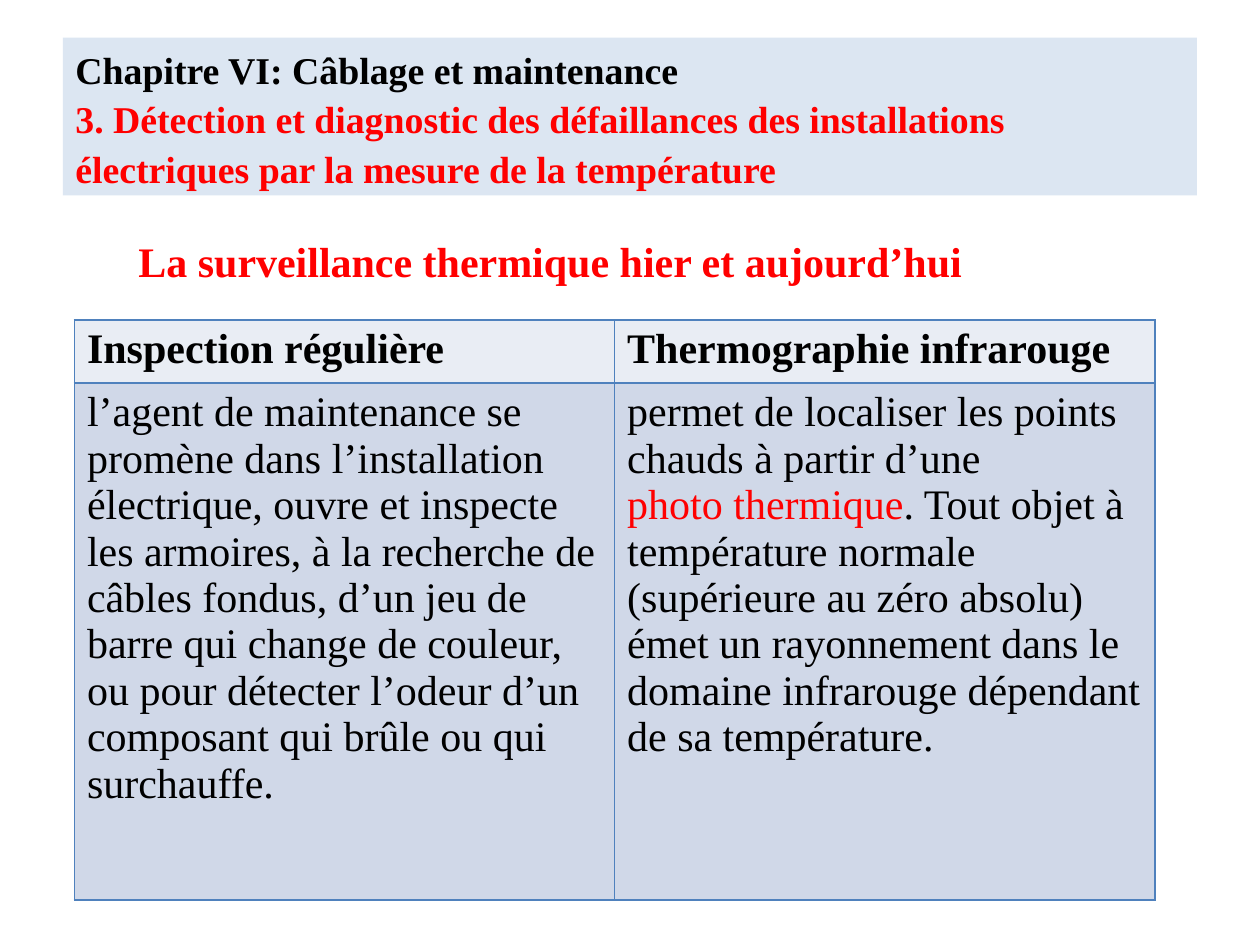
from dataclasses import dataclass

from lxml import etree
from pptx import Presentation
from pptx.dml.color import RGBColor
from pptx.enum.shapes import MSO_SHAPE
from pptx.enum.text import MSO_ANCHOR, PP_ALIGN
from pptx.oxml.ns import qn
from pptx.util import Cm, Pt

RECT = MSO_SHAPE.RECTANGLE
MIDDLE = MSO_ANCHOR.MIDDLE
LEFT = PP_ALIGN.LEFT


@dataclass(frozen=True)
class Theme:
    face: str = "Times New Roman"
    ink: str = "000000"
    red: str = "FF0000"
    band: str = "DCE6F2"
    head: str = "E9EDF4"
    body: str = "D0D8E8"
    edge: str = "4F81BD"
    title: float = 21.6
    text: float = 24


def rgb(code):
    return RGBColor.from_string(code)


class Page:
    def __init__(self, slide, theme):
        self.slide = slide
        self.theme = theme

    def letter(self, frame, parts, size, bold):
        """Fill the first paragraph with (text, colour) parts; None breaks the line."""
        para = frame.paragraphs[0]
        para.alignment = LEFT
        font = para.font
        font.name, font.size, font.bold = self.theme.face, Pt(size), bold
        hues = {part[1] for part in parts if part}
        if len(hues) == 1:
            font.color.rgb = rgb(hues.pop())
        for part in parts:
            if part is None:
                para.add_line_break()
                continue
            run = para.add_run()
            run.text = part[0]
            if hues:
                run.font.color.rgb = rgb(part[1])
        return para

    def banner(self, place, parts):
        box = self.slide.shapes.add_shape(RECT, *map(Cm, place))
        box.shadow.inherit = False
        box.fill.solid()
        box.fill.fore_color.rgb = rgb(self.theme.band)
        box.line.fill.background()
        box.text_frame.vertical_anchor = MIDDLE
        para = self.letter(box.text_frame, parts, self.theme.title, True)
        para.line_spacing = 1.09

    def label(self, place, text):
        box = self.slide.shapes.add_textbox(*map(Cm, place))
        box.text_frame.word_wrap = True
        self.letter(box.text_frame, [(text, self.theme.red)], self.theme.text, True)

    def border(self, cell):
        props = cell._tc.get_or_add_tcPr()
        for spot, side in enumerate(("lnL", "lnR", "lnT", "lnB")):
            line = etree.Element(qn(f"a:{side}"), w=str(Pt(1)))
            fill = etree.SubElement(line, qn("a:solidFill"))
            etree.SubElement(fill, qn("a:srgbClr"), val=self.theme.edge)
            props.insert(spot, line)

    def table(self, place, highs, rows):
        frame = self.slide.shapes.add_table(len(rows), len(rows[0]), *map(Cm, place))
        grid = frame.table
        grid.first_row = grid.horz_banding = False
        for r, (high, row) in enumerate(zip(highs, rows)):
            grid.rows[r].height = Cm(high)
            for c, parts in enumerate(row):
                cell = grid.cell(r, c)
                cell.fill.solid()
                cell.fill.fore_color.rgb = rgb(self.theme.body if r else self.theme.head)
                self.border(cell)
                self.letter(cell.text_frame, parts, self.theme.text, r == 0)


def main():
    deck = Presentation()
    deck.slide_width, deck.slide_height = Cm(25.4), Cm(19.05)
    theme = Theme()
    page = Page(deck.slides.add_slide(deck.slide_layouts[6]), theme)
    ink, red = theme.ink, theme.red

    page.banner((1.27, 0.76, 22.86, 3.18), [
        ("Chapitre VI: Câblage et maintenance", ink),
        None,
        ("3. Détection et diagnostic des défaillances des installations "
         "électriques par la mesure de la température", red),
    ])
    page.label((2.54, 4.62, 22.02, 1.27), "La surveillance thermique hier et aujourd’hui")

    highs = (1.27, 10.42)
    page.table((1.5, 6.45, 21.78, sum(highs)), highs, [
        [[("Inspection régulière", ink)], [("Thermographie infrarouge", ink)]],
        [
            [("l’agent de maintenance se promène dans l’installation électrique, "
              "ouvre et inspecte les armoires, à la recherche de câbles fondus, "
              "d’un jeu de barre qui change de couleur, ou pour détecter l’odeur "
              "d’un composant qui brûle ou qui surchauffe.", ink)],
            [("permet de localiser les points chauds à partir d’une", ink),
             None,
             ("photo thermique", red),
             (". Tout objet à température normale (supérieure au zéro absolu) émet "
              "un rayonnement dans le domaine infrarouge dépendant de sa "
              "température.", ink)],
        ],
    ])
    deck.save("out.pptx")


if __name__ == "__main__":
    main()
